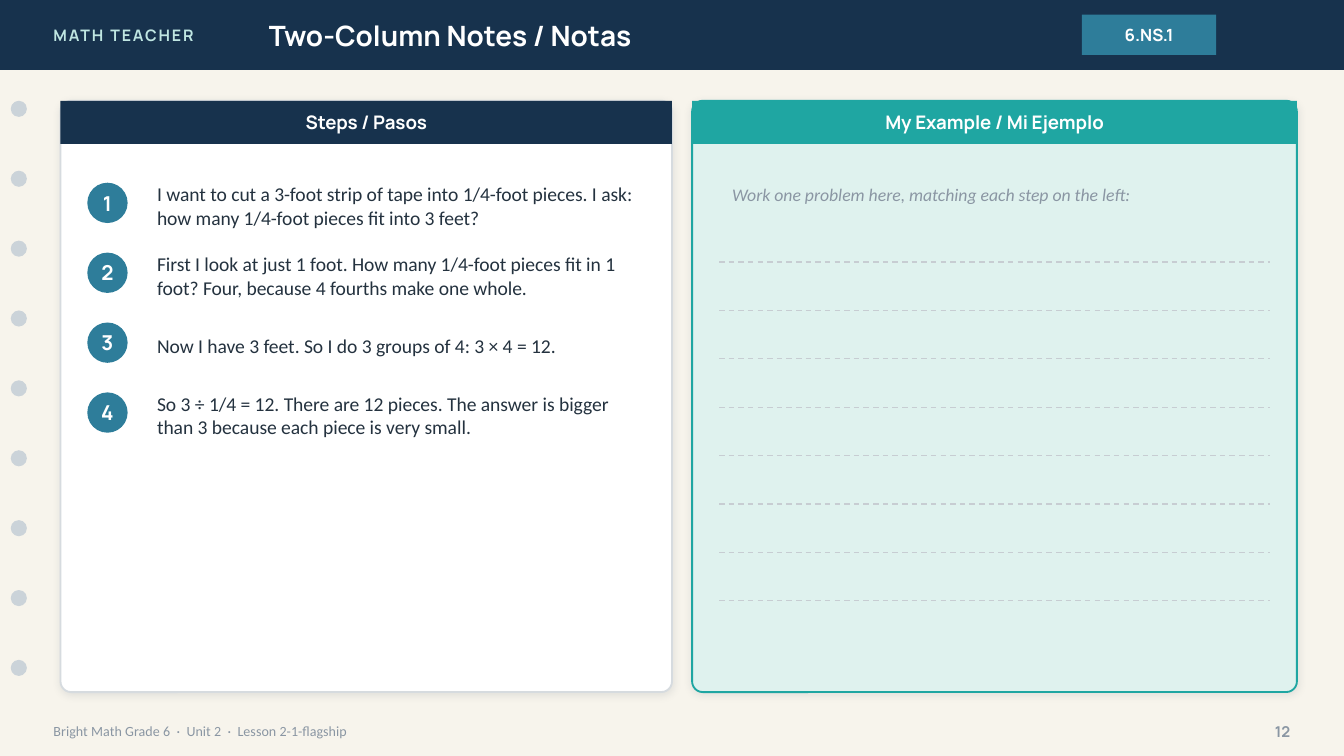
from dataclasses import dataclass

from lxml.etree import SubElement as Sub
from pptx import Presentation
from pptx.dml.color import RGBColor as RGB
from pptx.enum.dml import MSO_LINE as Dash
from pptx.enum.shapes import MSO_CONNECTOR as Conn, MSO_SHAPE as Geo
from pptx.enum.text import MSO_ANCHOR as Anchor, MSO_AUTO_SIZE as Auto, PP_ALIGN as Align
from pptx.oxml.ns import qn
from pptx.util import Inches, Pt


@dataclass(frozen=True)
class Theme:
    """Colours, fonts and type sizes of the slide."""
    page: str = "F7F4EC"
    navy: str = "17324D"
    blue: str = "2E7D9A"
    teal: str = "1FA6A2"
    mint: str = "DFF2EE"
    pale: str = "BFE6E2"
    white: str = "FFFFFF"
    ink: str = "24323F"
    mute: str = "8A96A3"
    hole: str = "CBD3D9"
    edge: str = "D6DBDF"
    rule: str = "C7CDD2"
    shade: str = "1C2E42"
    head: str = "Manrope"
    body: str = "Calibri"
    title: float = 15
    badge: float = 11
    step: float = 10.5
    panel: float = 10
    hint: float = 9.5
    code: float = 9
    brand: float = 8.5
    folio: float = 8
    foot: float = 7.5


class Deck:
    """Holds the theme and the current slide."""

    def __init__(self, theme):
        """Start a wide deck with one title-only slide."""
        self.theme = theme
        self.prs = Presentation()
        self.prs.slide_width = Inches(10)
        self.prs.slide_height = Inches(10) * 9 // 16
        self.slide = self.prs.slides.add_slide(self.prs.slide_layouts[5])
        fill = self.slide.background.fill
        fill.solid()
        fill.fore_color.rgb = RGB.from_string(theme.page)

    def label(self, shape, text, size, color, align=Align.LEFT, font=None,
              bold=True, ital=False, gap=0):
        """Fill a shape with one styled line of text."""
        frame = shape.text_frame
        frame.text = text
        frame.word_wrap = True
        frame.auto_size = Auto.NONE
        frame.vertical_anchor = Anchor.MIDDLE
        para = frame.paragraphs[0]
        para.alignment = align
        face = para.runs[0].font
        face.name = font or self.theme.head
        face.size = Pt(size)
        face.bold = bold
        face.italic = ital
        face.color.rgb = RGB.from_string(color)
        if gap:
            for prop in shape.element.iter(qn("a:rPr")):
                prop.set("spc", str(gap * 100))

    def text(self, box, *args, **style):
        """Add a text box."""
        shape = self.slide.shapes.add_textbox(*map(Inches, box))
        self.label(shape, *args, **style)

    def shape(self, geo, box, fill, line=None):
        """Add a flat preset shape."""
        shape = self.slide.shapes.add_shape(geo, *map(Inches, box))
        shape.fill.solid()
        shape.fill.fore_color.rgb = RGB.from_string(fill)
        if line:
            shape.line.color.rgb = RGB.from_string(line)
            shape.line.width = Pt(1)
        else:
            shape.line.fill.background()
        shape.shadow.inherit = False
        return shape

    def title(self, box, text, bar):
        """Place the title just above its bar."""
        shape = self.slide.shapes.title
        shape.left, shape.top, shape.width, shape.height = map(Inches, box)
        self.label(shape, text, self.theme.title, self.theme.white)
        bar.element.addnext(shape.element)

    def panel(self, box, text, fill, line, band):
        """Add a rounded card with a soft shadow and a header band."""
        card = self.shape(Geo.ROUNDED_RECTANGLE, box, fill, line)
        card.adjustments[0] = 0.018
        glow = card.element.spPr.find(qn("a:effectLst"))
        soft = Sub(glow, qn("a:outerShdw"), blurRad=str(Pt(4)), dist=str(Pt(1)),
                   dir="5400000", algn="bl", rotWithShape="0")
        tint = Sub(soft, qn("a:srgbClr"), val=self.theme.shade)
        Sub(tint, qn("a:alpha"), val="10000")
        top = self.shape(Geo.RECTANGLE, (*box[:3], 0.32), band)
        self.label(top, text, self.theme.panel, self.theme.white, Align.CENTER)

    def step(self, num, y, text):
        """Add a numbered badge and its step."""
        look = self.theme
        box = (0.65, y, 0.3, 0.3)
        self.shape(Geo.OVAL, box, look.blue)
        self.text(box, str(num), look.badge, look.white, Align.CENTER)
        self.text((1.07, y - 0.06, 3.78, 0.46), text, look.step, look.ink,
                  font=look.body, bold=False)

    def rule(self, left, right, y):
        """Add a dashed writing line."""
        line = self.slide.shapes.add_connector(
            Conn.STRAIGHT, Inches(left), Inches(y), Inches(right), Inches(y))
        line.line.color.rgb = RGB.from_string(self.theme.rule)
        line.line.width = Pt(0.75)
        line.line.dash_style = Dash.DASH
        Sub(line.element.spPr, qn("a:effectLst"))


STEPS = (
    "I want to cut a 3-foot strip of tape into 1/4-foot pieces. I ask: "
    "how many 1/4-foot pieces fit into 3 feet?",
    "First I look at just 1 foot. How many 1/4-foot pieces fit in 1 foot? "
    "Four, because 4 fourths make one whole.",
    "Now I have 3 feet. So I do 3 groups of 4: 3 × 4 = 12.",
    "So 3 ÷ 1/4 = 12. There are 12 pieces. The answer is bigger than 3 "
    "because each piece is very small.",
)


def main():
    """Build and save the notes slide."""
    look = Theme()
    deck = Deck(look)
    pitch = 0.52

    bar = deck.shape(Geo.RECTANGLE, (0, 0, 10, 0.52), look.navy)
    deck.text((0.3, 0, 2.4, 0.52), "MATH TEACHER", look.brand, look.pale, gap=1)
    deck.title((1.9, 0, 5.6, 0.52), "Two-Column Notes / Notas", bar)
    code = deck.shape(Geo.RECTANGLE, (8.05, 0.11, 1, 0.3), look.blue)
    deck.label(code, "6.NS.1", look.code, look.white, Align.CENTER)

    for i in range(9):
        deck.shape(Geo.OVAL, (0.08, 0.75 + i * pitch, 0.12, 0.12), look.hole)

    deck.text((0.3, 5.3, 7, 0.28), "Bright Math Grade 6  ·  Unit 2  ·  Lesson 2-1-flagship",
              look.foot, look.mute, font=look.body, bold=False)
    deck.text((9.2, 5.3, 0.5, 0.28), "12", look.folio, look.mute, Align.RIGHT)

    deck.panel((0.45, 0.75, 4.55, 4.4), "Steps / Pasos", look.white, look.edge, look.navy)
    for i, text in enumerate(STEPS):
        deck.step(i + 1, 1.36 + i * pitch, text)

    deck.panel((5.15, 0.75, 4.5, 4.4), "My Example / Mi Ejemplo", look.mint, look.teal, look.teal)
    deck.text((5.35, 1.25, 4.1, 0.4), "Work one problem here, matching each step on the left:",
              look.hint, look.mute, font=look.body, bold=False, ital=True)
    for i in range(8):
        deck.rule(5.35, 9.45, 1.95 + i * 0.36)

    deck.prs.save("out.pptx")


if __name__ == "__main__":
    main()
